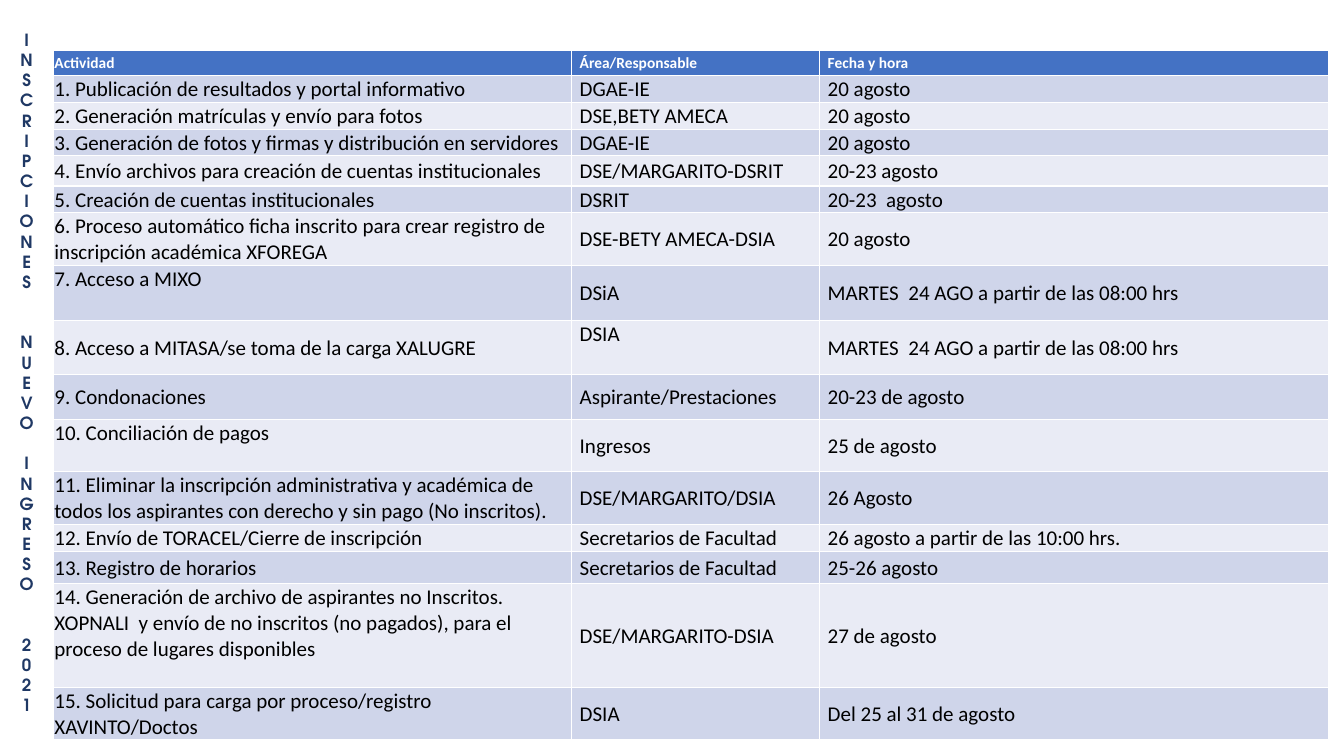
from dataclasses import dataclass

from pptx import Presentation
from pptx.dml.color import RGBColor
from pptx.enum.text import MSO_ANCHOR, MSO_AUTO_SIZE, PP_ALIGN
from pptx.util import Inches, Pt


@dataclass(frozen=True)
class Theme:
    header_fill: str = "4472C4"
    bands: tuple = ("CFD5EA", "E9EBF5")
    header_text: str = "FFFFFF"
    body_text: str = "000000"
    title_text: str = "1F3864"
    table_font: str = "Calibri"
    title_font: str = "TeX Gyre Adventor"
    header_size: float = 11
    body_size: float = 15
    title_size: float = 12


theme = Theme()


def style_font(paragraph, name, size, color, bold):
    font = paragraph.font
    font.name, font.size, font.bold = name, Pt(size), bold
    font.color.rgb = RGBColor.from_string(color)


presentation = Presentation()
presentation.slide_width = Inches(13.33)
presentation.slide_height = Inches(7.5)
slide = presentation.slides.add_slide(presentation.slide_layouts[5])

# Grid: a narrow title column, then the three table columns
title_width = 0.53
column_widths = (5.14, 2.46, 5.05)
table_top = 0.5

# Title: one letter per line, words separated by blank line heights
title = slide.shapes.title
title.left, title.top = Inches(0), Inches(0.11)
title.width, title.height = Inches(title_width), Inches(7.17)
title_frame = title.text_frame
title_frame.word_wrap = True
title_frame.auto_size = MSO_AUTO_SIZE.NONE
title_frame.vertical_anchor = MSO_ANCHOR.MIDDLE

line_height = 1.2 * theme.title_size
title_words = [("INSCRIPCIONES", 0), ("NUEVO", 2), ("INGRESO", 1), ("2021", 2)]
title_frame.text = "\n".join("".join(word for word, _ in title_words))
for letter in title_frame.paragraphs:
    letter.alignment = PP_ALIGN.CENTER
    letter.space_before = Pt(0)
    style_font(letter, theme.title_font, theme.title_size, theme.title_text, True)
first_letter = 0
for word, lines_before in title_words:
    title_frame.paragraphs[first_letter].space_before = Pt(lines_before * line_height)
    first_letter += len(word)

# Schedule: row height, activity, responsible area, date
schedule = [
    (0.25, "Actividad", "Área/Responsable", "Fecha y hora"),
    (0.26, "1. Publicación de resultados y portal informativo", "DGAE-IE", "20 agosto"),
    (0.26, "2. Generación matrículas y envío para fotos", "DSE,BETY AMECA", "20 agosto"),
    (0.26, "3. Generación de fotos y firmas y distribución en servidores", "DGAE-IE", "20 agosto"),
    (0.3, "4. Envío archivos para creación de cuentas institucionales",
     "DSE/MARGARITO-DSRIT", "20-23 agosto"),
    (0.26, "5. Creación de cuentas institucionales", "DSRIT", "20-23  agosto"),
    (0.52, "6. Proceso automático ficha inscrito para crear registro de inscripción académica XFOREGA",
     "DSE-BETY AMECA-DSIA", "20 agosto"),
    (0.55, "7. Acceso a MIXO", "DSiA", "MARTES  24 AGO a partir de las 08:00 hrs"),
    (0.53, "8. Acceso a MITASA/se toma de la carga XALUGRE", "DSIA",
     "MARTES  24 AGO a partir de las 08:00 hrs"),
    (0.45, "9. Condonaciones", "Aspirante/Prestaciones", "20-23 de agosto"),
    (0.52, "10. Conciliación de pagos", "Ingresos", "25 de agosto"),
    (0.52, "11. Eliminar la inscripción administrativa y académica de todos los aspirantes "
     "con derecho y sin pago (No inscritos).", "DSE/MARGARITO/DSIA", "26 Agosto"),
    (0.27, "12. Envío de TORACEL/Cierre de inscripción", "Secretarios de Facultad",
     "26 agosto a partir de las 10:00 hrs."),
    (0.32, "13. Registro de horarios", "Secretarios de Facultad", "25-26 agosto"),
    (1.03, "14. Generación de archivo de aspirantes no Inscritos. XOPNALI  y envío de no "
     "inscritos (no pagados), para el proceso de lugares disponibles",
     "DSE/MARGARITO-DSIA", "27 de agosto"),
    (0.52, "15. Solicitud para carga por proceso/registro XAVINTO/Doctos", "DSIA",
     "Del 25 al 31 de agosto"),
]
top_aligned = {(7, 0), (8, 1), (10, 0), (14, 0)}

# Table
table = slide.shapes.add_table(
    len(schedule), len(column_widths), Inches(title_width), Inches(table_top),
    Inches(sum(column_widths)), Inches(sum(row[0] for row in schedule)),
).table
for column, width in zip(table.columns, column_widths):
    column.width = Inches(width)

for row_index, (height, *entries) in enumerate(schedule):
    table.rows[row_index].height = Inches(height)
    is_header = row_index == 0
    fill = theme.header_fill if is_header else theme.bands[(row_index - 1) % 2]
    size = theme.header_size if is_header else theme.body_size
    color = theme.header_text if is_header else theme.body_text
    for column_index, entry in enumerate(entries):
        cell = table.cell(row_index, column_index)
        cell.text = entry
        cell.margin_left = Inches(0.08 if column_index else 0.01)
        cell.margin_top = cell.margin_right = Inches(0.01)
        cell.margin_bottom = Inches(0)
        at_top = (row_index, column_index) in top_aligned
        cell.vertical_anchor = MSO_ANCHOR.TOP if at_top else MSO_ANCHOR.MIDDLE
        cell.fill.solid()
        cell.fill.fore_color.rgb = RGBColor.from_string(fill)
        style_font(cell.text_frame.paragraphs[0], theme.table_font, size, color, is_header)

presentation.save("out.pptx")
